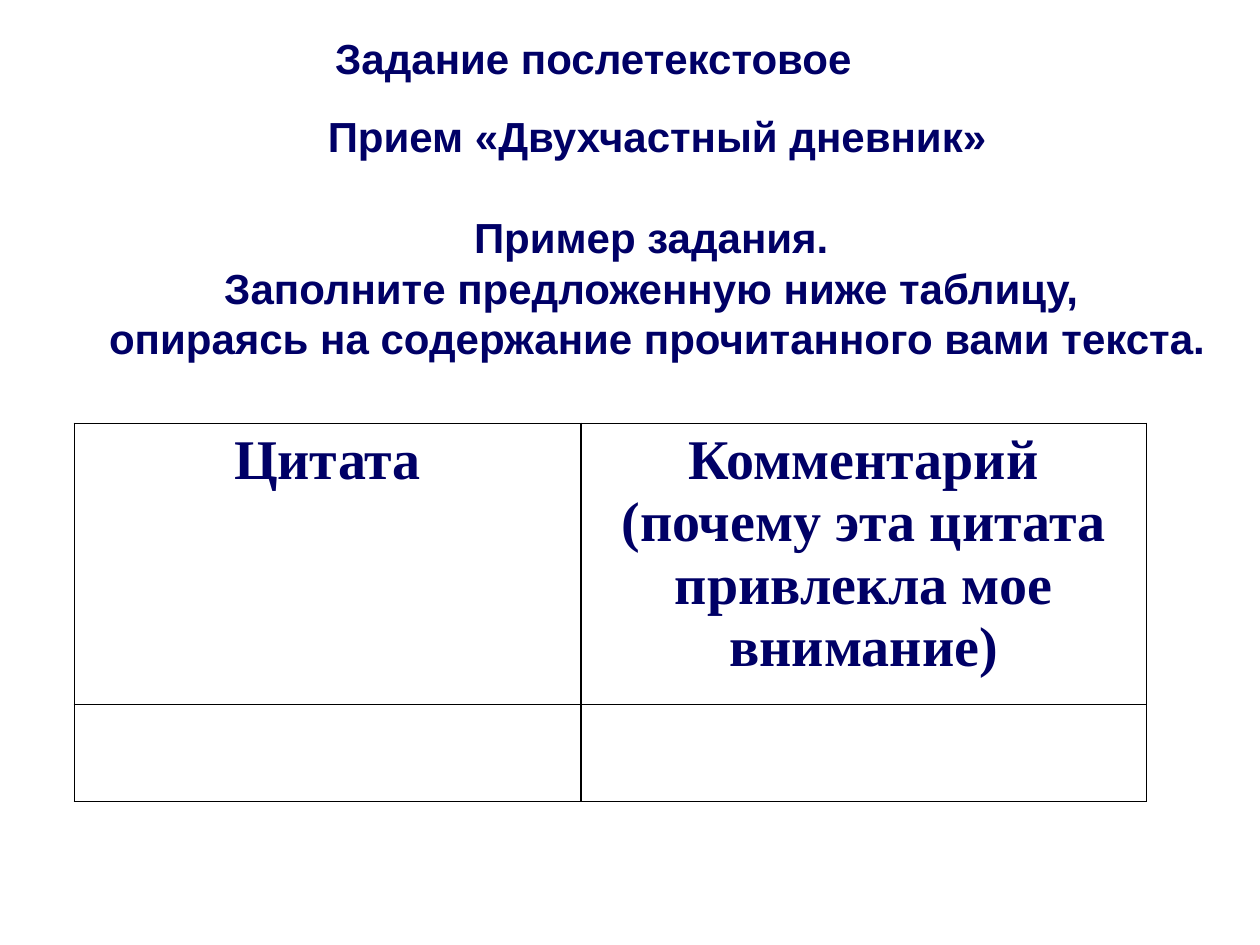
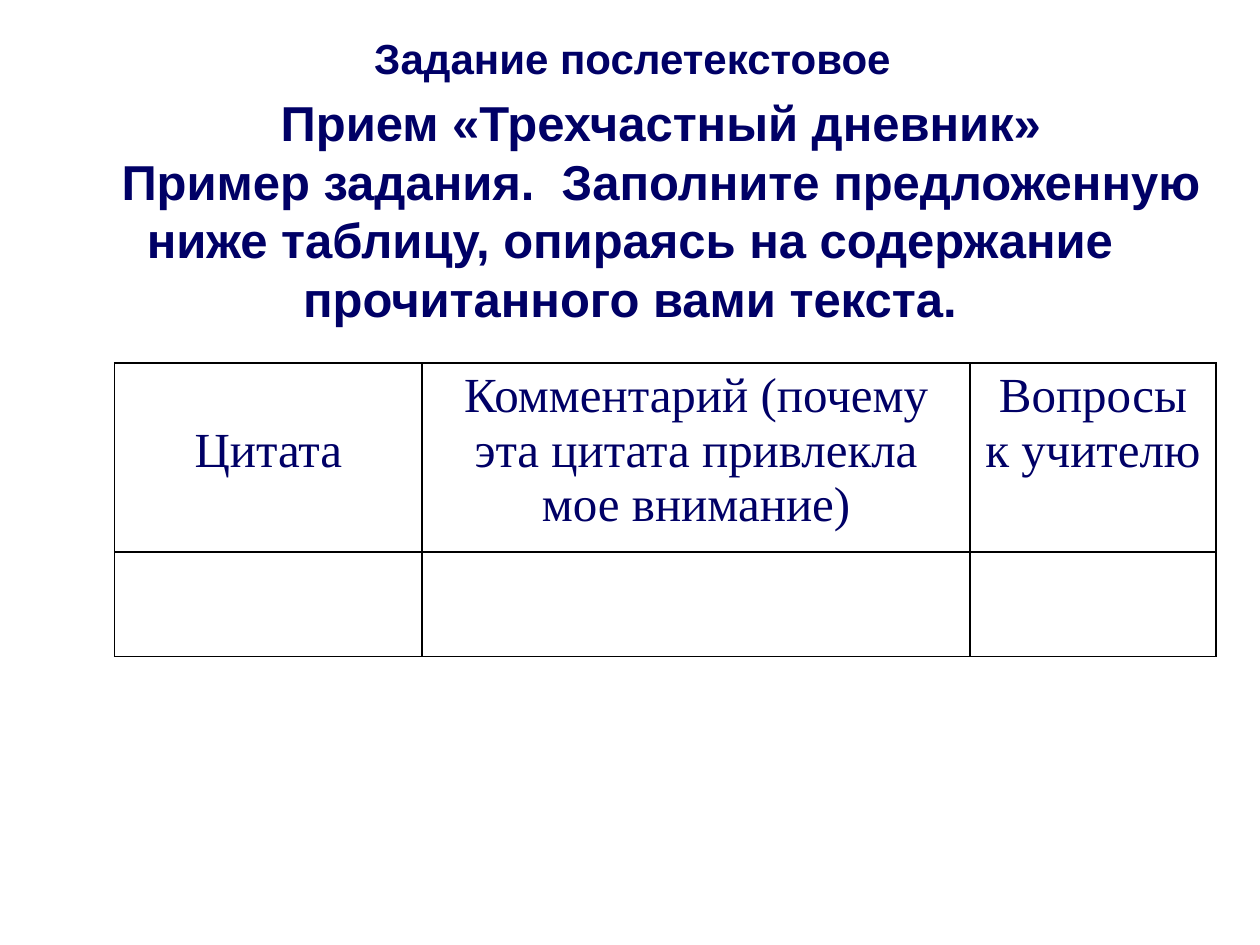
from dataclasses import dataclass

from lxml.etree import SubElement
from pptx import Presentation
from pptx.dml.color import RGBColor
from pptx.enum.text import MSO_ANCHOR, MSO_AUTO_SIZE, PP_ALIGN
from pptx.oxml.ns import qn
from pptx.util import Inches, Pt

NAVY = RGBColor(0x00, 0x00, 0x66)
BLACK = RGBColor(0x00, 0x00, 0x00)
HEADING_FONT = "Arial"
TABLE_FONT = "Times New Roman"
LINE_FACTOR = 1.2
TITLE_SIZE = 24
TITLE_TEXT = "Задание послетекстовое"
TITLE_ONLY_LAYOUT = 5
FIRST_LINE_INDENT = Inches(0.49)
BORDER_WIDTH = Pt(1)
COMMENT_HEADER = "Комментарий (почему эта цитата привлекла мое внимание)"


@dataclass(frozen=True)
class Box:
    left: float
    top: float
    width: float
    height: float

    def lengths(self) -> tuple:
        return tuple(Inches(v) for v in (self.left, self.top, self.width, self.height))


@dataclass(frozen=True)
class Header:
    text: str
    width: float
    top_margin: float = 0.05


@dataclass(frozen=True)
class DiarySlide:
    title_left: float
    task_box: Box
    task_size: int
    task_lines: tuple[str, ...]
    gap_after_technique: float
    table_left: float
    table_top: float
    row_heights: tuple[float, ...]
    headers: tuple[Header, ...]
    header_size: int
    header_bold: bool


DIARIES = (
    DiarySlide(
        title_left=2.56,
        task_box=Box(0.23, 0.82, 9.48, 2.12),
        task_size=24,
        task_lines=(
            "Прием «Двухчастный дневник»",
            "Пример задания. ",
            "Заполните предложенную ниже таблицу, ",
            "опираясь на содержание прочитанного вами текста.",
        ),
        gap_after_technique=24 * LINE_FACTOR,
        table_left=0.59,
        table_top=3.36,
        row_heights=(2.23, 0.77),
        headers=(Header("Цитата", 4.02), Header(COMMENT_HEADER, 4.49)),
        header_size=32,
        header_bold=True,
    ),
    DiarySlide(
        title_left=2.87,
        task_box=Box(0, 0.67, 10, 1.99),
        task_size=28,
        task_lines=(
            "Прием «Трехчастный дневник»",
            "Пример задания.  Заполните предложенную ниже таблицу, "
            "опираясь на содержание прочитанного вами текста.",
        ),
        gap_after_technique=0,
        table_left=0.91,
        table_top=2.88,
        row_heights=(1.5, 0.83),
        headers=(
            Header("Цитата", 2.44, top_margin=0.48),
            Header(COMMENT_HEADER, 4.35),
            Header("Вопросы к учителю", 1.95),
        ),
        header_size=28,
        header_bold=False,
    ),
)


def write_paragraph(paragraph, text: str, font_name: str, size: int, bold: bool, align) -> None:
    paragraph.alignment = align
    run = paragraph.add_run()
    run.text = text
    for attribute, value in {"name": font_name, "size": Pt(size), "bold": bold}.items():
        setattr(run.font, attribute, value)
    run.font.color.rgb = NAVY


def write_heading(paragraph, text: str, size: int, align) -> None:
    write_paragraph(paragraph, text, HEADING_FONT, size, True, align)
    paragraph.line_spacing = Pt(size * LINE_FACTOR)


def format_frame(frame, anchor, wrap: bool) -> None:
    settings = {"auto_size": MSO_AUTO_SIZE.NONE, "word_wrap": wrap, "vertical_anchor": anchor}
    for attribute, value in settings.items():
        setattr(frame, attribute, value)


def add_title(slide, left: float) -> None:
    title = slide.shapes.title
    title.left, title.top, title.width, title.height = Box(left, 0.21, 4.42, 0.5).lengths()
    format_frame(title.text_frame, MSO_ANCHOR.TOP, False)
    write_heading(title.text_frame.paragraphs[0], TITLE_TEXT, TITLE_SIZE, PP_ALIGN.LEFT)


def add_task(slide, diary: DiarySlide) -> None:
    frame = slide.shapes.add_textbox(*diary.task_box.lengths()).text_frame
    format_frame(frame, MSO_ANCHOR.MIDDLE, True)
    for index, line in enumerate(diary.task_lines):
        paragraph = frame.add_paragraph() if index else frame.paragraphs[0]
        write_heading(paragraph, line, diary.task_size, PP_ALIGN.CENTER)
        paragraph._p.get_or_add_pPr().set("indent", str(FIRST_LINE_INDENT))
    frame.paragraphs[0].space_after = Pt(diary.gap_after_technique)


def outline_cell(cell) -> None:
    properties = cell._tc.get_or_add_tcPr()
    for side in ("a:lnL", "a:lnR", "a:lnT", "a:lnB"):
        border = SubElement(properties, qn(side), w=str(BORDER_WIDTH))
        fill = SubElement(border, qn("a:solidFill"))
        SubElement(fill, qn("a:srgbClr"), val=str(BLACK))
    cell.fill.background()


def add_diary_table(slide, diary: DiarySlide) -> None:
    box = Box(diary.table_left, diary.table_top,
              sum(header.width for header in diary.headers), sum(diary.row_heights))
    table = slide.shapes.add_table(
        len(diary.row_heights), len(diary.headers), *box.lengths()).table
    table.first_row = table.horz_banding = False
    for row, height in zip(table.rows, diary.row_heights):
        row.height = Inches(height)
    for cell in table.iter_cells():
        outline_cell(cell)
    for index, header in enumerate(diary.headers):
        table.columns[index].width = Inches(header.width)
        cell = table.cell(0, index)
        cell.margin_top = Inches(header.top_margin)
        write_paragraph(cell.text_frame.paragraphs[0], header.text, TABLE_FONT,
                        diary.header_size, diary.header_bold, PP_ALIGN.CENTER)


def main() -> None:
    presentation = Presentation()
    presentation.slide_width, presentation.slide_height = Inches(10), Inches(7.5)
    for diary in DIARIES:
        slide = presentation.slides.add_slide(presentation.slide_layouts[TITLE_ONLY_LAYOUT])
        add_title(slide, diary.title_left)
        add_task(slide, diary)
        add_diary_table(slide, diary)
    presentation.save("out.pptx")


if __name__ == "__main__":
    main()
